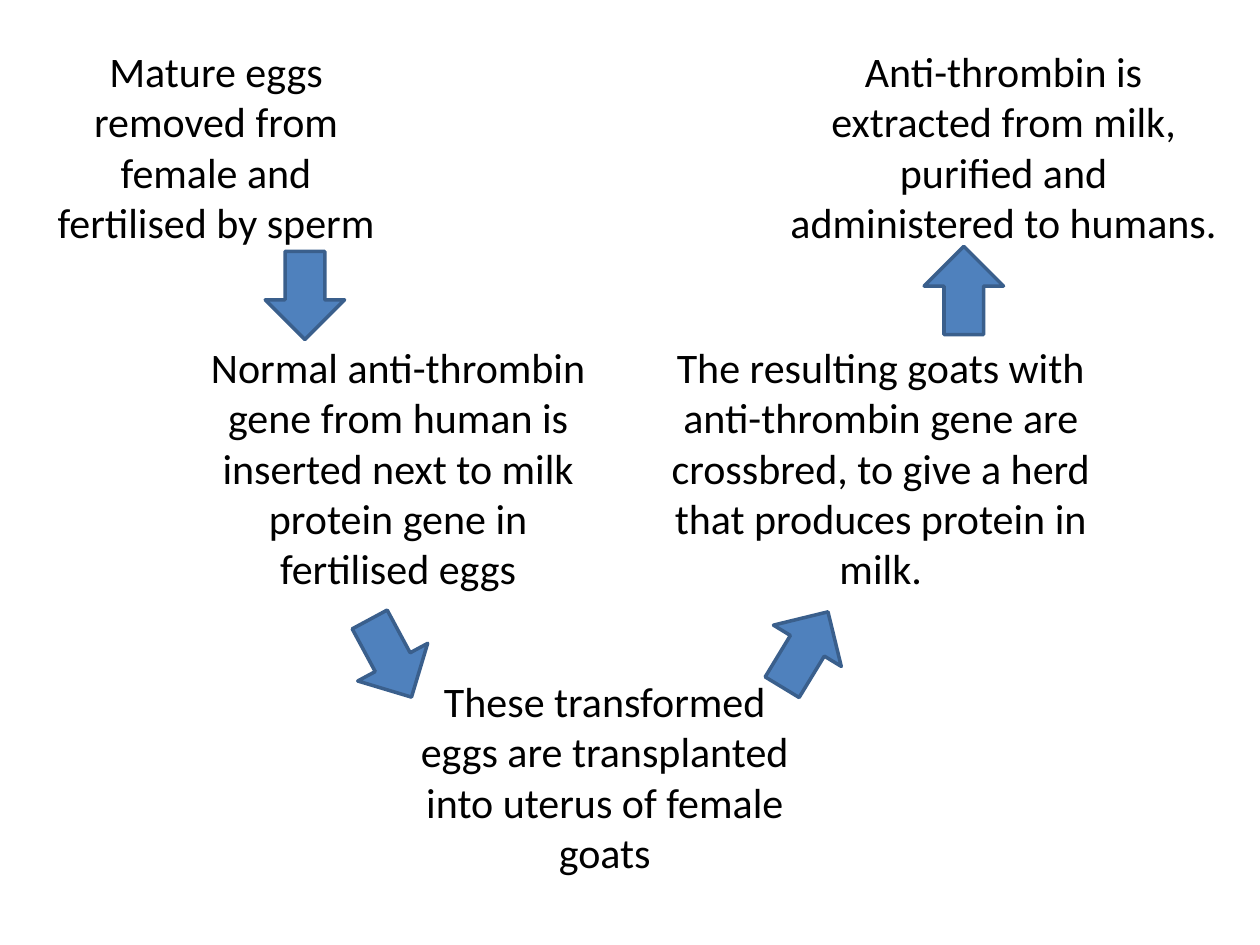
from pptx import Presentation
from pptx.dml.color import RGBColor
from pptx.enum import shapes, text
from pptx.util import Inches, Pt


def color(code):
    return RGBColor.from_string(code)


deck = Presentation()
deck.slide_width, deck.slide_height = Inches(10), Inches(7.5)
slide = deck.slides.add_slide(deck.slide_layouts[6])

# Steps of the process: left, top, width, height, wording
steps = [
    (0.23, 0.31, 2.97, 1.72, "Mature eggs removed from female and fertilised by sperm"),
    (1.48, 2.66, 3.36, 2.12, "Normal anti-thrombin gene from human is inserted next to "
                             "milk protein gene in fertilised eggs"),
    (3.12, 5.31, 3.36, 1.72, "These transformed eggs are transplanted into uterus of "
                             "female goats"),
    (5.23, 2.66, 3.52, 2.12, "The resulting goats with anti-thrombin gene are crossbred, "
                             "to give a herd that produces protein in milk."),
    (6.17, 0.31, 3.59, 1.72, "Anti-thrombin is extracted from milk, purified and "
                             "administered to humans."),
]
for left, top, width, height, words in steps:
    box = slide.shapes.add_textbox(Inches(left), Inches(top), Inches(width), Inches(height))
    frame = box.text_frame
    frame.word_wrap = True
    frame.auto_size = text.MSO_AUTO_SIZE.SHAPE_TO_FIT_TEXT
    frame.text = words
    para = frame.paragraphs[0]
    para.alignment = text.PP_ALIGN.CENTER
    font = para.runs[0].font
    font.name, font.size = "Calibri", Pt(24)
    font.color.rgb = color("000000")

# Arrows from step to step: left, top, rotation
arrows = [(2.07, 2.03, 90), (2.75, 4.91, 61.7), (6.04, 4.84, 301.3), (7.3, 1.99, 270)]
for left, top, turn in arrows:
    arrow = slide.shapes.add_shape(shapes.MSO_SHAPE.RIGHT_ARROW, Inches(left), Inches(top),
                                   Inches(0.7), Inches(0.63))
    arrow.rotation = turn
    arrow.shadow.inherit = False
    arrow.fill.solid()
    arrow.fill.fore_color.rgb = color("4F81BD")
    arrow.line.color.rgb = color("3A5F8C")
    arrow.line.width = Pt(2)

deck.save("out.pptx")
